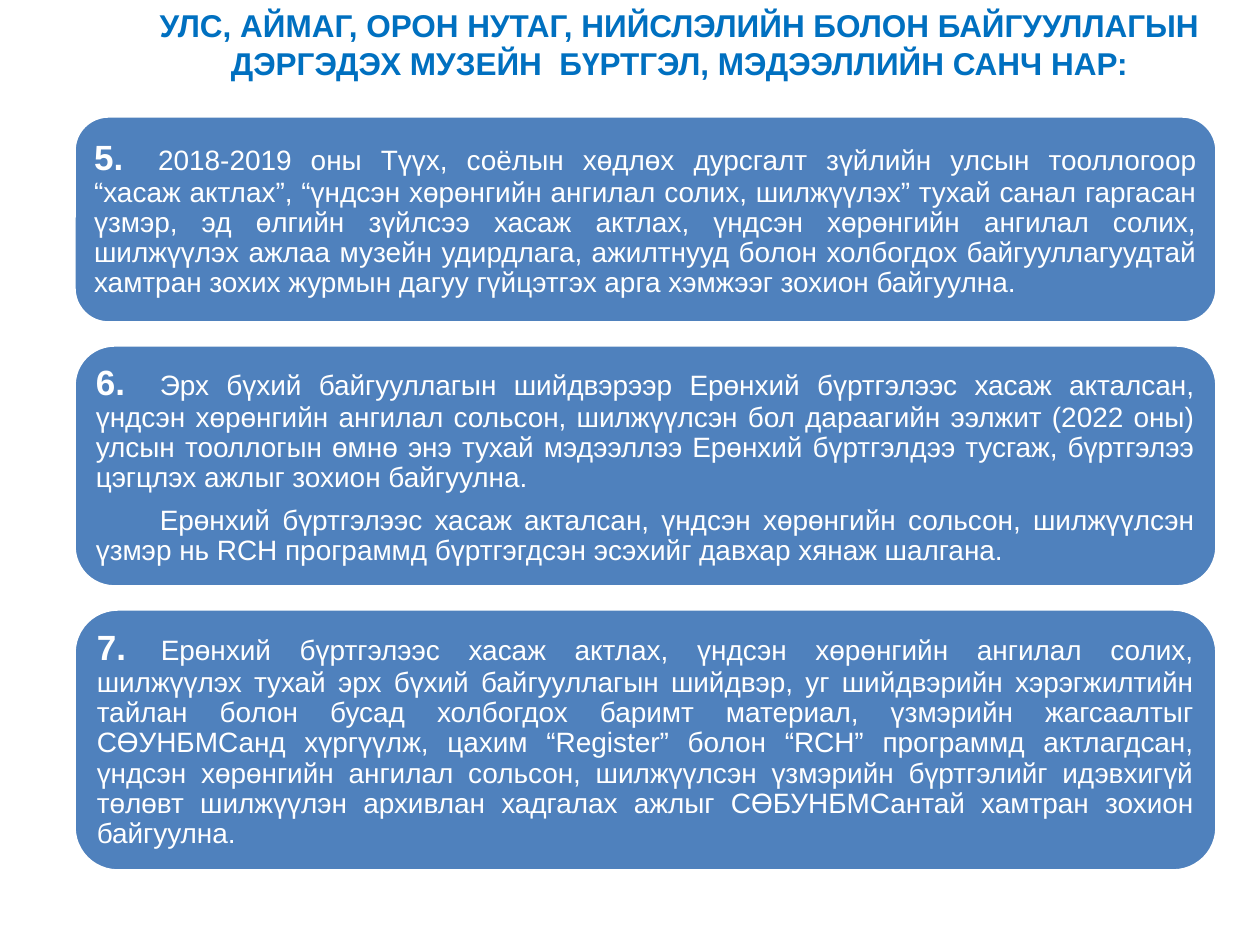
import pptx
import pptx.dml.color
import pptx.enum.shapes
import pptx.enum.text
import pptx.oxml
import pptx.oxml.ns
import pptx.util

PX = 914400 / 126
COLORS = {"panel": "4F81BD", "white": "FFFFFF", "title": "0070C0"}
TITLE = ("УЛС, АЙМАГ, ОРОН НУТАГ, НИЙСЛЭЛИЙН БОЛОН БАЙГУУЛЛАГЫН "
         "ДЭРГЭДЭХ МУЗЕЙН  БҮРТГЭЛ, МЭДЭЭЛЛИЙН САНЧ НАР:")
PANELS = [
    (207, "5.", [
        "2018-2019 оны Түүх, соёлын хөдлөх дурсгалт зүйлийн улсын тооллогоор "
        "“хасаж актлах”, “үндсэн хөрөнгийн ангилал солих, шилжүүлэх” тухай санал "
        "гаргасан үзмэр, эд өлгийн зүйлсээ хасаж актлах, үндсэн хөрөнгийн ангилал "
        "солих, шилжүүлэх ажлаа музейн удирдлага, ажилтнууд болон холбогдох "
        "байгууллагуудтай хамтран зохих журмын дагуу гүйцэтгэх арга хэмжээг "
        "зохион байгуулна."]),
    (242, "6.", [
        "Эрх бүхий байгууллагын шийдвэрээр Ерөнхий бүртгэлээс хасаж акталсан, "
        "үндсэн хөрөнгийн ангилал сольсон, шилжүүлсэн бол дараагийн ээлжит "
        "(2022 оны) улсын тооллогын өмнө энэ тухай мэдээллээ Ерөнхий бүртгэлдээ "
        "тусгаж, бүртгэлээ цэгцлэх ажлыг зохион байгуулна.",
        "Ерөнхий бүртгэлээс хасаж акталсан, үндсэн хөрөнгийн сольсон, шилжүүлсэн "
        "үзмэр нь RCH программд бүртгэгдсэн эсэхийг давхар хянаж шалгана."]),
    (262, "7.", [
        "Ерөнхий бүртгэлээс хасаж актлах, үндсэн хөрөнгийн ангилал солих, "
        "шилжүүлэх тухай эрх бүхий байгууллагын шийдвэр, уг шийдвэрийн "
        "хэрэгжилтийн тайлан болон бусад холбогдох баримт материал, үзмэрийн "
        "жагсаалтыг СӨУНБМСанд хүргүүлж, цахим “Register” болон “RCH” программд "
        "актлагдсан, үндсэн хөрөнгийн ангилал сольсон, шилжүүлсэн үзмэрийн "
        "бүртгэлийг идэвхигүй төлөвт шилжүүлэн архивлан хадгалах ажлыг "
        "СӨБУНБМСантай хамтран зохион байгуулна."]),
]


def px(n):
    return pptx.util.Emu(round(n * PX))


def rgb(name):
    return pptx.dml.color.RGBColor.from_string(COLORS[name])


class Deck:
    font = "Arial"
    tab = 64

    def __init__(self, width, height):
        self.prs = pptx.Presentation()
        self.prs.slide_width, self.prs.slide_height = px(width), px(height)
        self.slide = self.prs.slides.add_slide(self.prs.slide_layouts[6])

    def style(self, p, size, color, align):
        p.alignment = align
        p.font.name = self.font
        p.font.size = pptx.util.Pt(size)
        p.font.color.rgb = rgb(color)

    def title(self, text, x, y, w, h):
        tf = self.slide.shapes.add_textbox(px(x), px(y), px(w), px(h)).text_frame
        tf.word_wrap = True
        tf.auto_size = pptx.enum.text.MSO_AUTO_SIZE.SHAPE_TO_FIT_TEXT
        p = tf.paragraphs[0]
        p.text = text
        self.style(p, 18, "title", pptx.enum.text.PP_ALIGN.CENTER)
        p.font.bold = True

    def add_tab(self, p):
        tabs = pptx.oxml.parse_xml(
            f'<a:tabLst {pptx.oxml.ns.nsdecls("a")}>'
            f'<a:tab pos="{px(self.tab)}" algn="l"/></a:tabLst>')
        p._p.get_or_add_pPr().append(tabs)

    def panel(self, number, texts, x, y, w, h):
        sp = self.slide.shapes.add_shape(
            pptx.enum.shapes.MSO_SHAPE.ROUNDED_RECTANGLE, px(x), px(y), px(w), px(h))
        sp.shadow.inherit = False
        sp.fill.solid()
        sp.fill.fore_color.rgb = rgb("panel")
        sp.line.color.rgb = rgb("white")
        sp.line.width = pptx.util.Pt(2)
        tf = sp.text_frame
        tf.word_wrap = True
        tf.vertical_anchor = pptx.enum.text.MSO_ANCHOR.MIDDLE
        tf.margin_left = tf.margin_right = px(10)
        tf.margin_top = tf.margin_bottom = px(5)
        for i, text in enumerate(texts):
            p = tf.add_paragraph() if i else tf.paragraphs[0]
            self.add_tab(p)
            self.style(p, 16, "white", pptx.enum.text.PP_ALIGN.JUSTIFY)
            p.line_spacing = 0.9
            p.space_after = pptx.util.Pt(7)
            r = p.add_run()
            r.text = "\t" if i else number + "\t"
            if not i:
                r.font.size = pptx.util.Pt(20)
                r.font.bold = True
            p.add_run().text = text


def main():
    deck = Deck(1260, 945)
    top, gap = 116, 22
    for height, number, texts in PANELS:
        deck.panel(number, texts, 74, top, 1143, height)
        top += height + gap
    deck.title(TITLE, 120, 0, 1119, 89)
    deck.prs.save("out.pptx")


if __name__ == "__main__":
    main()
